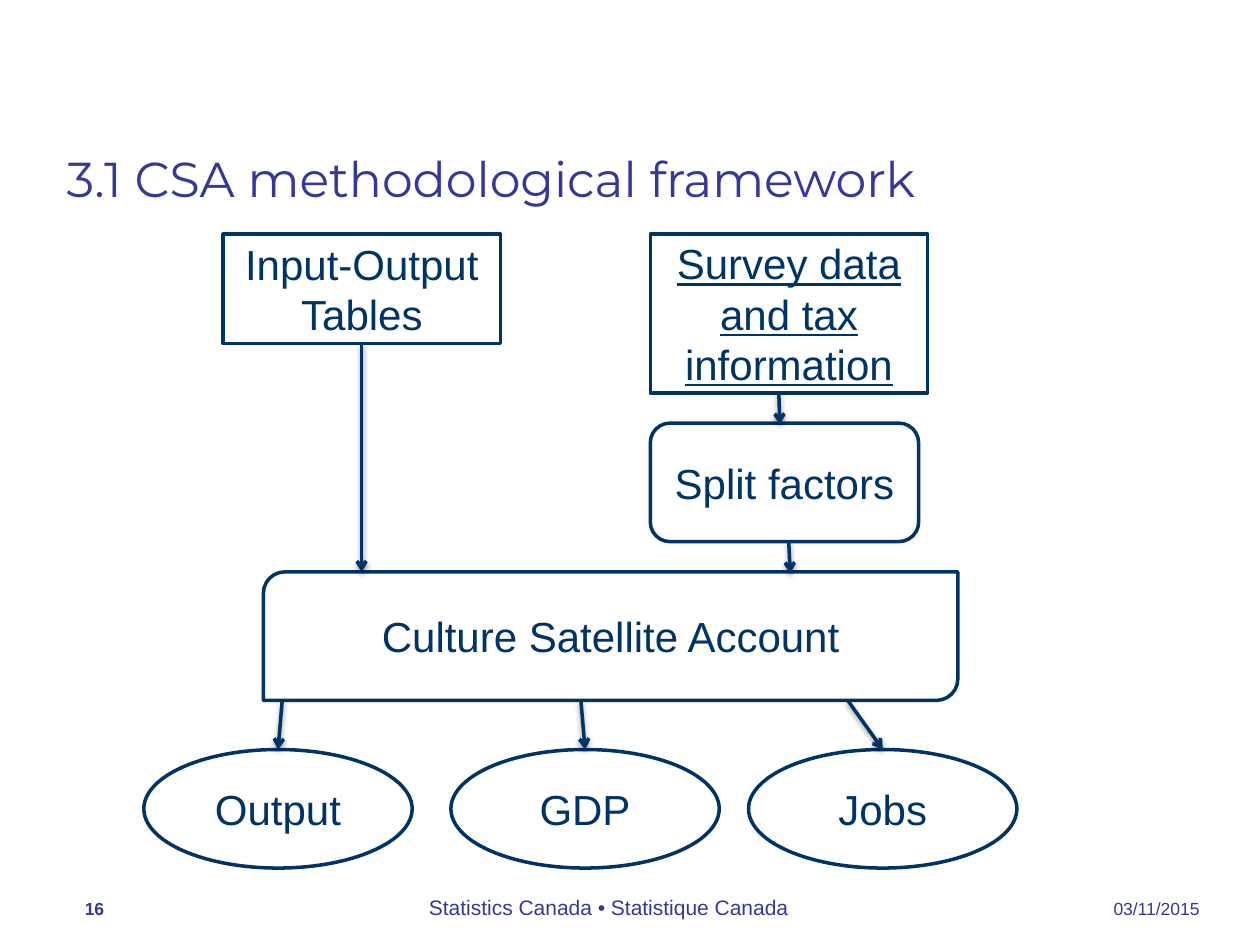
from lxml import etree
from pptx import Presentation
from pptx.dml.color import RGBColor
from pptx.enum import shapes, text
from pptx.oxml import ns
from pptx.util import Cm, Pt

INDIGO = RGBColor(0x37, 0x37, 0x99)
NAVY = RGBColor(0x00, 0x33, 0x66)
WHITE = RGBColor(0xFF, 0xFF, 0xFF)
SHAPE = shapes.MSO_SHAPE
ALIGN = text.PP_ALIGN
ANCHOR = text.MSO_ANCHOR


def write(shape, words, size, color, align, anchor, font="Arial", bold=False, underline=False):
    frame = shape.text_frame
    frame.word_wrap = True
    frame.auto_size = text.MSO_AUTO_SIZE.NONE
    frame.vertical_anchor = anchor
    paragraph = frame.paragraphs[0]
    paragraph.alignment = align
    run = paragraph.add_run()
    run.text = words
    run.font.name = font
    run.font.size = Pt(size)
    run.font.bold = bold
    run.font.underline = underline
    run.font.color.rgb = color


def add_node(slide, kind, left, top, width, height, words, underline=False):
    shape = slide.shapes.add_shape(kind, Cm(left), Cm(top), Cm(width), Cm(height))
    shape.shadow.inherit = False
    shape.fill.solid()
    shape.fill.fore_color.rgb = WHITE
    shape.line.color.rgb = NAVY
    shape.line.width = Pt(2)
    write(shape, words, 24, NAVY, ALIGN.CENTER, ANCHOR.MIDDLE, underline=underline)


def add_arrow(slide, x1, y1, x2, y2):
    arrow = slide.shapes.add_connector(
        shapes.MSO_CONNECTOR.STRAIGHT, Cm(x1), Cm(y1), Cm(x2), Cm(y2))
    arrow.line.color.rgb = NAVY
    arrow.line.width = Pt(2)
    etree.SubElement(arrow.line._get_or_add_ln(), ns.qn("a:tailEnd"), type="arrow")
    # Soft shadow straight below the line
    effects = etree.SubElement(arrow._element.spPr, ns.qn("a:effectLst"))
    shadow = etree.SubElement(
        effects, ns.qn("a:outerShdw"), blurRad=str(Pt(3.1)), dist=str(Pt(1.6)),
        dir="5400000", rotWithShape="0")
    black = etree.SubElement(shadow, ns.qn("a:srgbClr"), val="000000")
    etree.SubElement(black, ns.qn("a:alpha"), val="38000")


def add_title(slide, left, top, width, height):
    title = slide.shapes.title
    title.left, title.top, title.width, title.height = map(Cm, (left, top, width, height))
    write(title, "3.1 CSA methodological framework", 28, INDIGO,
          ALIGN.LEFT, ANCHOR.BOTTOM, font="Montserrat")


def add_footer(slide, left, top, height):
    # Offset, width, words, size, alignment, bold
    parts = [
        (20.42, 2.92, "03/11/2015", 10, ALIGN.RIGHT, False),
        (2.79, 16.79, "Statistics Canada • Statistique Canada", 12, ALIGN.CENTER, False),
        (0, 1.63, "16", 10, ALIGN.CENTER, True),
    ]
    for offset, width, words, size, align, bold in parts:
        box = slide.shapes.add_textbox(Cm(left + offset), Cm(top), Cm(width), Cm(height))
        write(box, words, size, INDIGO, align, ANCHOR.BOTTOM, bold=bold)


def add_framework(slide, left, top):
    # Sources, split factors and the account
    nodes = [
        (SHAPE.RECTANGLE, 1.6, 0, 5.59, 2.21, "Input-Output Tables", False),
        (SHAPE.RECTANGLE, 10.21, 0, 5.59, 3.2, "Survey data and tax information", True),
        (SHAPE.ROUNDED_RECTANGLE, 10.21, 3.81, 5.41, 2.39, "Split factors", False),
        (SHAPE.ROUND_2_DIAG_RECTANGLE, 2.41, 6.81, 14, 2.59, "Culture Satellite Account", False),
    ]
    for kind, x, y, width, height, words, underline in nodes:
        add_node(slide, kind, left + x, top + y, width, height, words, underline)

    # Arrows leading to the account
    for x1, y1, x2, y2 in [(4.39, 2.21, 4.39, 6.81), (12.8, 3.2, 12.82, 3.84),
                           (13, 6.2, 13.03, 6.84)]:
        add_arrow(slide, left + x1, top + y1, left + x2, top + y2)

    # Results, each with its arrow from the account
    width = 5.41
    for words, x, start in [("Output", 0, 2.79), ("GDP", 6.19, 8.81), ("Jobs", 12.19, 14.19)]:
        add_node(slide, SHAPE.OVAL, left + x, top + 10.39, width, 2.39, words)
        add_arrow(slide, left + start, top + 9.4, left + x + width / 2, top + 10.39)


def main():
    presentation = Presentation()
    presentation.slide_width = Cm(25.4)
    presentation.slide_height = Cm(19.05)
    slide = presentation.slides.add_slide(presentation.slide_layouts[5])
    slide.background.fill.solid()
    slide.background.fill.fore_color.rgb = WHITE
    add_title(slide, 1.09, 2.34, 23.22, 1.96)
    add_footer(slide, 1.09, 17.33, 1.33)
    add_framework(slide, 2.9, 4.72)
    presentation.save("out.pptx")


if __name__ == "__main__":
    main()
